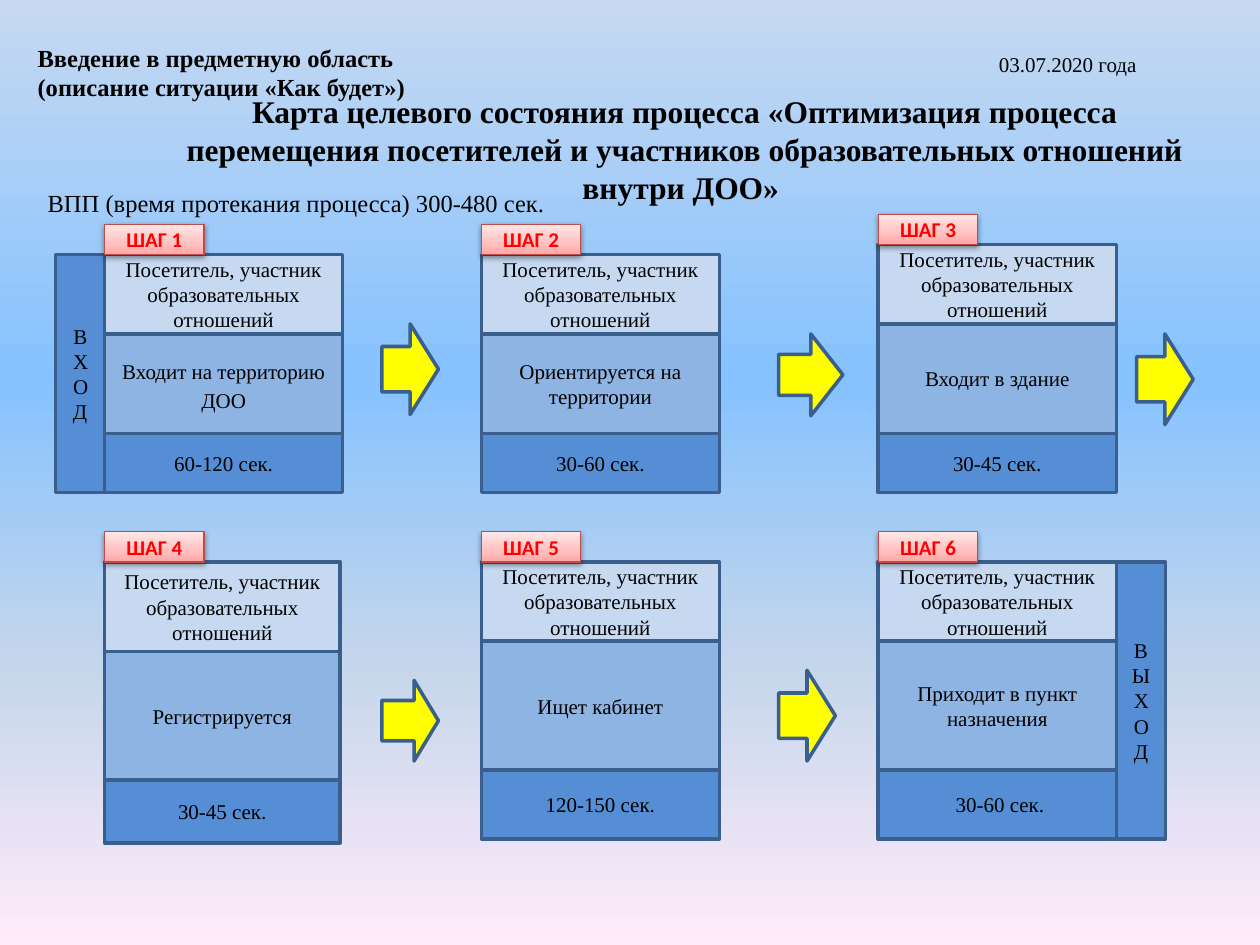
from dataclasses import dataclass

import pptx
import pptx.dml.color
import pptx.enum.shapes
import pptx.enum.text
import pptx.oxml
import pptx.oxml.ns
import pptx.util
from pptx.util import Inches

COLORS = {
    "text": "000000",
    "actor": "C6D9F1",
    "action": "8EB4E3",
    "time": "558ED5",
    "outline": "3A5F8C",
    "arrow": "FFFF00",
    "label_text": "FF0000",
    "label_line": "BF4C48",
}
BACKGROUND_STOPS = [(0, "C6D9F1"), (40, "85C2FF"), (70, "C4D6EB"), (100, "FFEBFA")]
LABEL_STOPS = [(0, "FFA6A5"), (35, "FFC0BF"), (100, "FFE7E7")]
SERIF = "Times New Roman"
ACTOR = "Посетитель, участник образовательных отношений"
COLUMNS = (0.83, 3.82, 6.97)
LABEL_WIDTH, LABEL_HEIGHT = 0.79, 0.24
GATE_WIDTH = 0.39
SHAPE = pptx.enum.shapes.MSO_SHAPE
ALIGN = pptx.enum.text.PP_ALIGN
ANCHOR = pptx.enum.text.MSO_ANCHOR


@dataclass
class Box:
    left: float
    top: float
    width: float
    height: float

    def lengths(self) -> list:
        return [Inches(v) for v in (self.left, self.top, self.width, self.height)]


@dataclass
class Step:
    column: int
    top: float
    action: str
    time: str
    heights: tuple[float, float, float]  # actor, action, time
    width: float = 1.89
    action_spacing: float = 1.0


@dataclass
class Arrow:
    box: Box
    head: float = 0.5


STEPS = [
    Step(0, 2.02, "Входит на территорию ДОО", "60-120 сек.", (0.63, 0.79, 0.47), action_spacing=1.15),
    Step(1, 2.02, "Ориентируется на территории", "30-60 сек.", (0.63, 0.79, 0.47)),
    Step(2, 1.94, "Входит в здание", "30-45 сек.", (0.63, 0.87, 0.47)),
    Step(0, 4.46, "Регистрируется", "30-45 сек.", (0.71, 1.02, 0.5), width=1.87),
    Step(1, 4.46, "Ищет кабинет", "120-150 сек.", (0.63, 1.02, 0.55)),
    Step(2, 4.46, "Приходит в пункт назначения", " 30-60 сек.", (0.63, 1.02, 0.55)),
]
ARROWS = [
    Arrow(Box(3.03, 2.57, 0.45, 0.72)),
    Arrow(Box(6.18, 2.65, 0.51, 0.65)),
    Arrow(Box(9.02, 2.65, 0.45, 0.72)),
    Arrow(Box(3.03, 5.4, 0.45, 0.64), head=0.43),
    Arrow(Box(6.18, 5.32, 0.45, 0.72)),
]


def rgb(name: str):
    return pptx.dml.color.RGBColor.from_string(COLORS[name])


def set_gradient(fill, owner, stops: list, angle: int) -> None:
    """Fill with any number of stops; the angle runs clockwise in degrees."""
    fill.gradient()
    gradient = owner.find(".//" + pptx.oxml.ns.qn("a:gradFill"))
    stop_list = gradient.find(pptx.oxml.ns.qn("a:gsLst"))
    for old_stop in list(stop_list):
        stop_list.remove(old_stop)
    for position, color in stops:
        stop_list.append(pptx.oxml.parse_xml(
            f'<a:gs {pptx.oxml.ns.nsdecls("a")} pos="{position * 1000}">'
            f'<a:srgbClr val="{color}"/></a:gs>'))
    gradient.find(pptx.oxml.ns.qn("a:lin")).set("ang", str(angle * 60000))


def write(holder, text: str, size: int = 12, align=ALIGN.CENTER, anchor=ANCHOR.MIDDLE,
          font: str = SERIF, color: str = "text", bold: bool = False, spacing: float = 1.0) -> None:
    frame = holder.text_frame
    frame.word_wrap = True
    frame.auto_size = pptx.enum.text.MSO_AUTO_SIZE.NONE
    frame.vertical_anchor = anchor
    frame.text = text
    for paragraph in frame.paragraphs:
        paragraph.alignment = align
        paragraph.line_spacing = spacing
        paragraph.font.name = font
        paragraph.font.size = pptx.util.Pt(size)
        paragraph.font.bold = bold
        paragraph.font.color.rgb = rgb(color)


def add_note(slide, box: Box, text: str, size: int, bold: bool = False) -> None:
    note = slide.shapes.add_textbox(*box.lengths())
    write(note, text, size, ALIGN.LEFT, ANCHOR.TOP, bold=bold)


def add_block(slide, box: Box, fill: str, kind=SHAPE.RECTANGLE):
    block = slide.shapes.add_shape(kind, *box.lengths())
    block.shadow.inherit = False
    block.fill.solid()
    block.fill.fore_color.rgb = rgb(fill)
    block.line.color.rgb = rgb("outline")
    block.line.width = pptx.util.Pt(2)
    return block


def add_gate(slide, box: Box, text: str) -> None:
    """Draw the entry or exit bar with stacked letters."""
    gate = add_block(slide, box, "time")
    write(gate, text)
    gate.text_frame._txBody.bodyPr.set("vert", "wordArtVert")


def add_label(slide, box: Box, text: str) -> None:
    label = add_block(slide, box, "actor")
    set_gradient(label.fill, label._element.spPr, LABEL_STOPS, 270)
    label.line.color.rgb = rgb("label_line")
    label.line.width = pptx.util.Pt(0.75)
    effects = label._element.spPr.find(pptx.oxml.ns.qn("a:effectLst"))
    effects.append(pptx.oxml.parse_xml(
        f'<a:outerShdw {pptx.oxml.ns.nsdecls("a")} blurRad="{pptx.util.Pt(3.1)}" '
        f'dist="{pptx.util.Pt(1.6)}" dir="5400000" rotWithShape="0">'
        '<a:srgbClr val="000000"><a:alpha val="38000"/></a:srgbClr></a:outerShdw>'))
    write(label, text, font="Calibri", color="label_text", bold=True)


def add_step(slide, number: int, step: Step) -> None:
    left, top = COLUMNS[step.column], step.top
    rows = (("actor", ACTOR, 1.0), ("action", step.action, step.action_spacing), ("time", step.time, 1.0))
    for (fill, text, spacing), height in zip(rows, step.heights):
        write(add_block(slide, Box(left, top, step.width, height), fill), text, spacing=spacing)
        top += height
    add_label(slide, Box(left, step.top - LABEL_HEIGHT, LABEL_WIDTH, LABEL_HEIGHT), f"ШАГ {number}")


def add_arrow(slide, arrow: Arrow) -> None:
    shape = add_block(slide, arrow.box, "arrow", SHAPE.RIGHT_ARROW)
    shape.adjustments[1] = arrow.head


def main() -> None:
    deck = pptx.Presentation()
    deck.slide_width, deck.slide_height = Inches(10), Inches(7.5)
    slide = deck.slides.add_slide(deck.slide_layouts[5])
    set_gradient(slide.background.fill, slide._element, BACKGROUND_STOPS, 90)

    title = slide.shapes.title
    title.left, title.top, title.width, title.height = Box(1.3, 0.68, 8.27, 1.01).lengths()
    write(title, "Карта целевого состояния процесса «Оптимизация процесса перемещения "
          "посетителей и участников образовательных отношений внутри ДОО» ",
          18, anchor=ANCHOR.TOP, bold=True)
    add_note(slide, Box(0.2, 0.29, 3.22, 0.81),
             "Введение в предметную область\n(описание ситуации «Как будет»)", 14, bold=True)
    add_note(slide, Box(7.83, 0.36, 1.57, 0.3), "03.07.2020 года", 12)
    add_note(slide, Box(0.28, 1.44, 9, 0.32), "ВПП (время протекания процесса) 300-480 сек.", 14)

    add_gate(slide, Box(COLUMNS[0] - GATE_WIDTH, 2.02, GATE_WIDTH, 1.89), "ВХОД")
    add_gate(slide, Box(COLUMNS[2] + 1.89, 4.46, GATE_WIDTH, 2.2), "ВЫХОД")
    for number, step in enumerate(STEPS, start=1):
        add_step(slide, number, step)
    for arrow in ARROWS:
        add_arrow(slide, arrow)
    deck.save("out.pptx")


if __name__ == "__main__":
    main()
